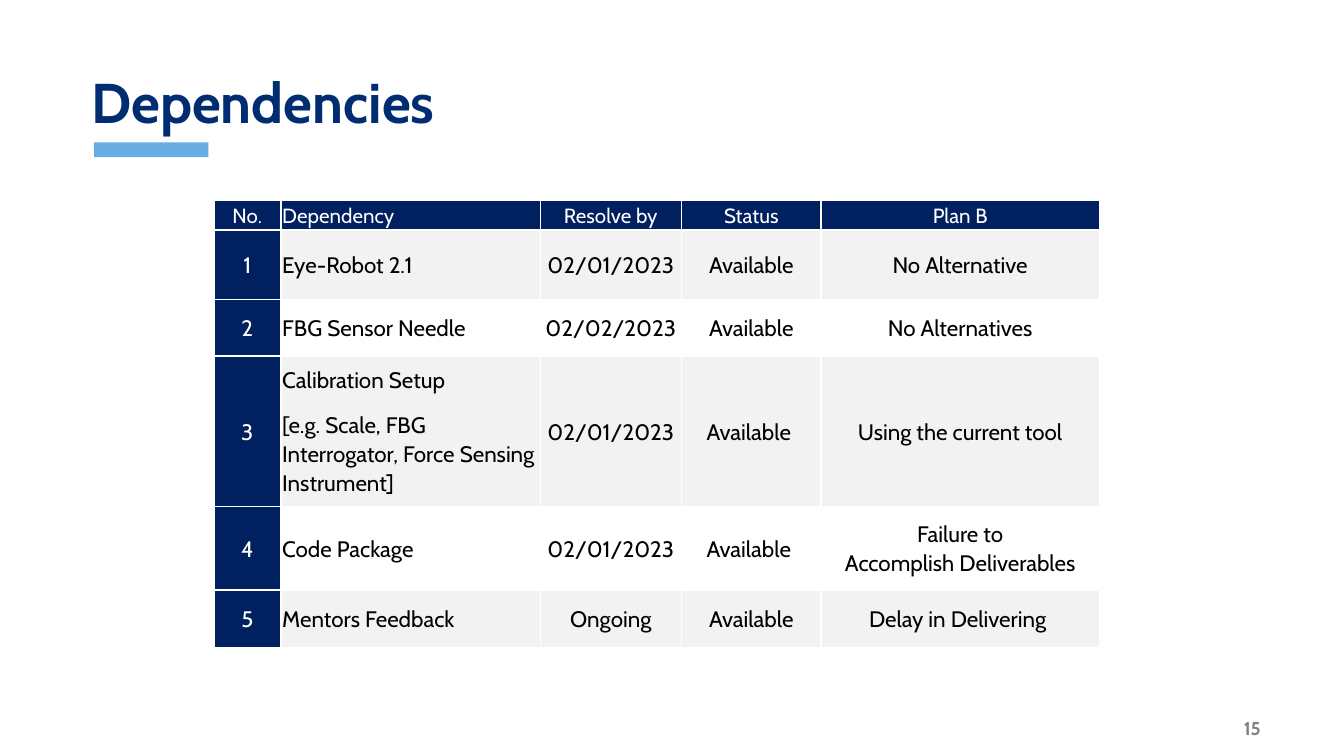
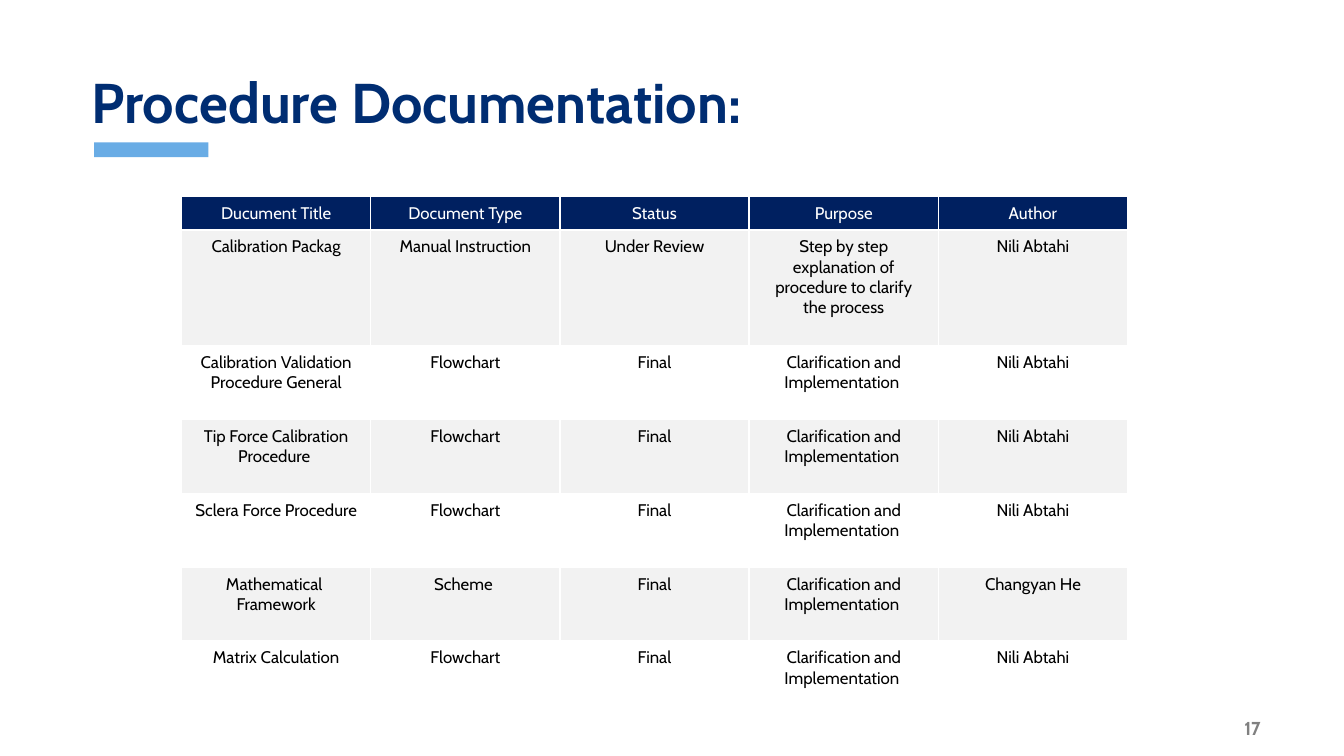
from dataclasses import dataclass

from lxml import etree
from pptx import Presentation
from pptx.dml import color
from pptx.enum import shapes, text
from pptx.oxml import ns
from pptx.util import Inches, Pt

FONT = "Cabin"
WHITE, BLACK, GREY = "FFFFFF", "000000", "808080"
TITLE_BLUE, ACCENT, NAVY, BAND = "002D72", "69ACE5", "002060", "F2F2F2"
LEFT, CENTER, RIGHT = text.PP_ALIGN.LEFT, text.PP_ALIGN.CENTER, text.PP_ALIGN.RIGHT
TOP, MIDDLE, BOTTOM = text.MSO_ANCHOR.TOP, text.MSO_ANCHOR.MIDDLE, text.MSO_ANCHOR.BOTTOM
TIE = chr(160)  # space that does not break


@dataclass(frozen=True)
class Grid:
    """Content and format of one table; line breaks part paragraphs."""
    left: float
    top: float
    columns: list[float]
    heights: list[float]
    rows: list[list[str]]
    header_size: float
    body_size: float
    anchor: text.MSO_ANCHOR = TOP
    inset: float | None = None
    line_spacing: float | None = None
    space_after: float | None = None
    left_column: int | None = None
    numbered: bool = False


@dataclass(frozen=True)
class Page:
    title: str
    number: str
    grid: Grid


def rgb(value: str) -> color.RGBColor:
    return color.RGBColor.from_string(value)


def write(frame, content: str, *, size: float, ink: str, bold: bool = False,
          align=LEFT, line_spacing: float | None = None,
          space_after: float | None = None) -> None:
    """Fill a text frame, one paragraph for each line of content."""
    for index, line in enumerate(content.split("\n")):
        paragraph = frame.paragraphs[0] if index == 0 else frame.add_paragraph()
        paragraph.alignment = align
        if line_spacing is not None:
            paragraph.line_spacing = line_spacing
        if space_after is not None:
            paragraph.space_after = Pt(space_after)
        run = paragraph.add_run()
        run.text = line
        run.font.name, run.font.size, run.font.bold = FONT, Pt(size), bold
        run.font.color.rgb = rgb(ink)


def set_borders(cell) -> None:
    """Thin white rules around a cell."""
    properties = cell._tc.get_or_add_tcPr()
    for index, side in enumerate(["lnL", "lnR", "lnT", "lnB"]):
        rule = etree.Element(ns.qn(f"a:{side}"), w=str(Pt(1)))
        fill = etree.SubElement(rule, ns.qn("a:solidFill"))
        etree.SubElement(fill, ns.qn("a:srgbClr"), val=WHITE)
        properties.insert(index, rule)


def add_grid(slide, grid: Grid) -> None:
    table = slide.shapes.add_table(
        len(grid.rows), len(grid.columns), Inches(grid.left), Inches(grid.top),
        Inches(sum(grid.columns)), Inches(sum(grid.heights))).table
    table.horz_banding = False
    for column, width in zip(table.columns, grid.columns):
        column.width = Inches(width)
    for row, height in zip(table.rows, grid.heights):
        row.height = Inches(height)

    for r, values in enumerate(grid.rows):
        for c, value in enumerate(values):
            cell = table.cell(r, c)
            cell.vertical_anchor = grid.anchor
            if grid.inset is not None:
                cell.margin_left = cell.margin_right = Inches(grid.inset)
                cell.margin_top = cell.margin_bottom = Inches(grid.inset)
            heading = r == 0 or (grid.numbered and c == 0)
            if heading or r % 2:
                cell.fill.solid()
                cell.fill.fore_color.rgb = rgb(NAVY if heading else BAND)
            else:
                cell.fill.background()
            set_borders(cell)
            write(cell.text_frame, value,
                  size=grid.header_size if r == 0 else grid.body_size,
                  ink=WHITE if heading else BLACK,
                  align=LEFT if c == grid.left_column else CENTER,
                  line_spacing=grid.line_spacing, space_after=grid.space_after)


def add_page(deck, page: Page) -> None:
    slide = deck.slides.add_slide(deck.slide_layouts[5])

    # Accent bar under the title
    bar = slide.shapes.add_shape(shapes.MSO_SHAPE.RECTANGLE, Inches(0.7),
                                 Inches(1.06), Inches(0.85), Inches(0.11))
    bar.shadow.inherit = False
    bar.fill.solid()
    bar.fill.fore_color.rgb = rgb(ACCENT)
    bar.line.fill.background()

    # Page number
    number = slide.shapes.add_textbox(Inches(8.63), Inches(5.32),
                                      Inches(0.87), Inches(0.19)).text_frame
    number.word_wrap = True
    number.margin_right = Inches(0.12)
    number.vertical_anchor = MIDDLE
    write(number, page.number, size=10, ink=GREY, bold=True, align=RIGHT)

    # Title
    title = slide.shapes.title
    title.left, title.top = Inches(0.58), Inches(0.12)
    title.width, title.height = Inches(8.92), Inches(0.94)
    title.text_frame.auto_size = text.MSO_AUTO_SIZE.NONE
    title.text_frame.vertical_anchor = BOTTOM
    write(title.text_frame, page.title, size=30, ink=TITLE_BLUE, bold=True,
          line_spacing=0.9)

    add_grid(slide, page.grid)


DEPENDENCIES = Grid(
    left=1.59, top=1.49,
    columns=[0.5, 1.93, 1.05, 1.04, 2.07],
    heights=[0.22, 0.52, 0.42, 1.12, 0.62, 0.43],
    rows=[
        ["No.", "Dependency", "Resolve by", "Status", "Plan B"],
        ["1", "Eye-Robot 2.1", "02/01/2023", "Available", "No Alternative"],
        ["2", "FBG Sensor Needle", "02/02/2023", "Available", "No Alternatives"],
        ["3", "Calibration Setup\n"
              f"[e.g.{TIE}Scale, FBG Interrogator, Force{TIE}Sensing Instrument]",
         "02/01/2023", f"Available{TIE}", "Using the current tool"],
        ["4", "Code Package", "02/01/2023", f"Available{TIE}",
         f"Failure to Accomplish{TIE}Deliverables"],
        ["5", "Mentors Feedback", "Ongoing", "Available",
         f"Delay in Delivering{TIE}"],
    ],
    header_size=11, body_size=12, anchor=MIDDLE, inset=0.01,
    line_spacing=1.07, space_after=8, left_column=1, numbered=True)

PURPOSE = "Clarification and Implementation "
LEAD = "Nili Abtahi"

DOCUMENTS = Grid(
    left=1.35, top=1.46,
    columns=[7.04 / 5] * 5,
    heights=[0.25, 0.86] + [0.55] * 5,
    rows=[
        ["Ducument Title", "Document Type", "Status", "Purpose", "Author"],
        ["Calibration Packag", "Manual Instruction", "Under Review",
         "Step by step explanation of procedure to clarify the process", LEAD],
        ["Calibration Validation Procedure General", "Flowchart", "Final",
         PURPOSE, LEAD],
        ["Tip Force Calibration Procedure ", "Flowchart", "Final", PURPOSE, LEAD],
        ["Sclera Force Procedure", "Flowchart", "Final", PURPOSE, LEAD],
        ["Mathematical \nFramework", "Scheme ", "Final", PURPOSE, "Changyan He"],
        ["Matrix Calculation", "Flowchart", "Final", PURPOSE, LEAD],
    ],
    header_size=9, body_size=9)

PAGES = [
    Page("Dependencies", "15", DEPENDENCIES),
    Page("Procedure Documentation:", "17", DOCUMENTS),
]


def main() -> None:
    deck = Presentation()
    # Widescreen, 16 to 9
    deck.slide_width, deck.slide_height = Inches(10), Inches(10) * 9 // 16
    for page in PAGES:
        add_page(deck, page)
    deck.save("out.pptx")


if __name__ == "__main__":
    main()
